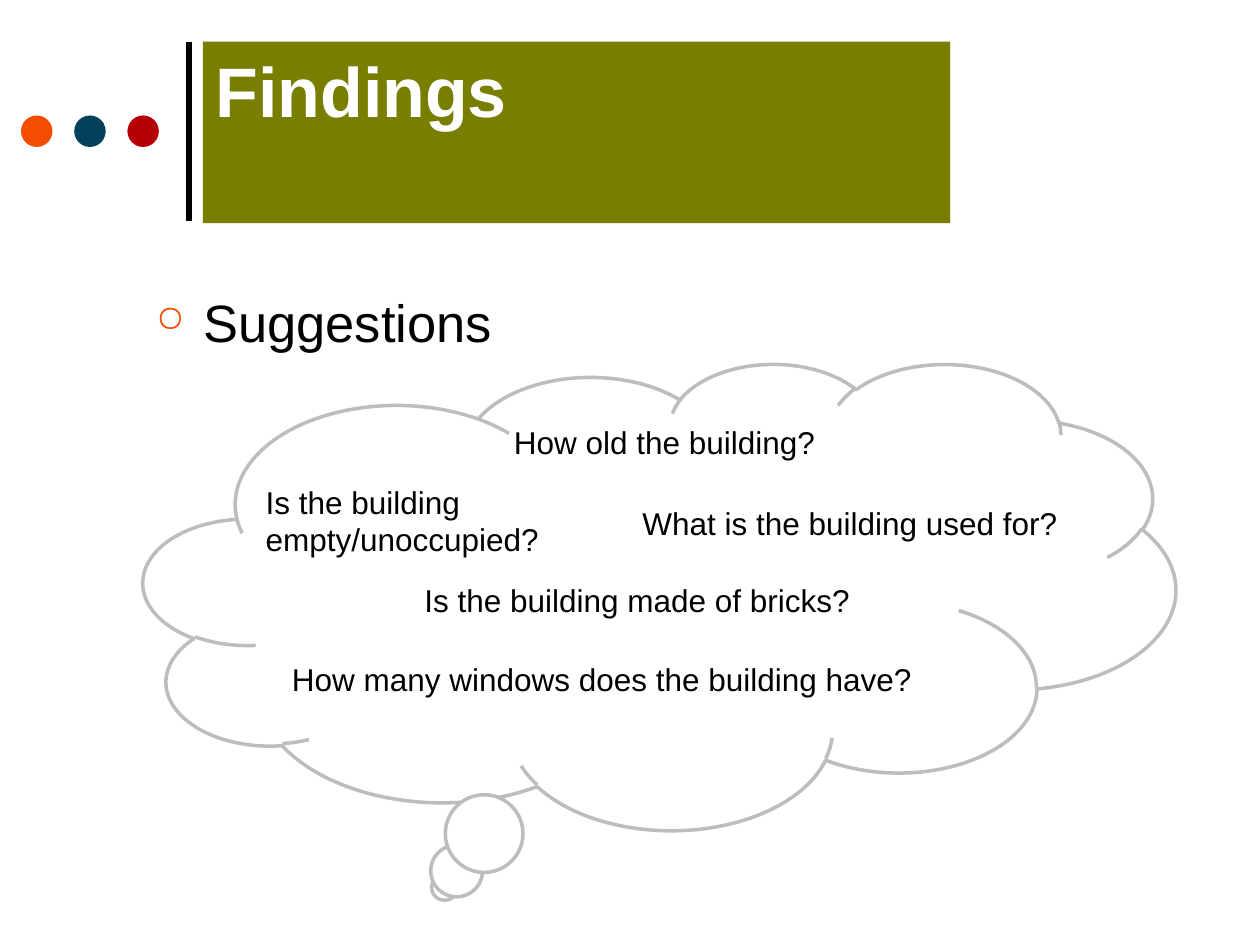
from dataclasses import dataclass

from lxml.etree import SubElement
from pptx import Presentation
from pptx.dml.color import RGBColor
from pptx.enum.shapes import MSO_CONNECTOR, MSO_SHAPE
from pptx.enum.text import MSO_ANCHOR, MSO_AUTO_SIZE, PP_ALIGN
from pptx.oxml.ns import qn
from pptx.shapes.autoshape import Shape
from pptx.slide import Slide
from pptx.text.text import _Paragraph
from pptx.util import Pt


@dataclass(frozen=True)
class Theme:
    font: str = "Arial"
    title_size: float = 40
    body_size: float = 30
    question_size: float = 18
    ink: str = "000000"
    paper: str = "FFFFFF"
    olive: str = "797E01"
    outline: str = "BDBDBD"
    dots: tuple[str, ...] = ("F54C00", "01415B", "B70005")


@dataclass(frozen=True)
class Area:
    left: float
    top: float
    width: float
    height: float

    def lengths(self) -> tuple[Pt, ...]:
        return Pt(self.left), Pt(self.top), Pt(self.width), Pt(self.height)


@dataclass(frozen=True)
class Question:
    text: str
    area: Area


THEME = Theme()
TITLE_AREA = Area(116, 23.75, 427, 103.75)
BODY_AREA = Area(82, 162, 612, 312)
CLOUD_AREA = Area(82, 207.4, 589.7, 266.4)
DOT_SIZE, DOT_STEP = 18, 30.4
BULLET_INDENT = 27

QUESTIONS = (
    Question("How old the building?", Area(286.6, 238.3, 203.8, 28.8)),
    Question("Is the building made of bricks?", Area(235.5, 328.3, 283.7, 28.8)),
    Question("How many windows does the building have?", Area(159.8, 373.7, 393, 28.8)),
    Question("What is the building used for?", Area(360, 284.4, 283.7, 28.8)),
    Question("Is the building empty/unoccupied?", Area(144.7, 272.2, 283.7, 51)),
)


def color(value: str) -> RGBColor:
    return RGBColor.from_string(value)


def style_text(para: _Paragraph, size: float, ink: str, bold: bool = False) -> None:
    para.alignment = PP_ALIGN.LEFT
    para.font.name = THEME.font
    para.font.size = Pt(size)
    para.font.bold = bold
    para.font.color.rgb = color(ink)


def add_title(page: Slide, text: str) -> None:
    title = page.shapes.title
    title.left, title.top, title.width, title.height = TITLE_AREA.lengths()
    title.fill.solid()
    title.fill.fore_color.rgb = color(THEME.olive)
    title.text_frame.text = text
    title.text_frame.vertical_anchor = MSO_ANCHOR.TOP
    style_text(title.text_frame.paragraphs[0], THEME.title_size, THEME.paper, bold=True)


def add_filled(page: Slide, kind: MSO_SHAPE, area: Area, fill: str) -> Shape:
    shape = page.shapes.add_shape(kind, *area.lengths())
    shape.shadow.inherit = False
    shape.fill.solid()
    shape.fill.fore_color.rgb = color(fill)
    shape.line.fill.background()
    return shape


def add_rule(page: Slide) -> None:
    rule = page.shapes.add_connector(
        MSO_CONNECTOR.STRAIGHT, Pt(108), Pt(126), Pt(108), Pt(24))
    rule.line.color.rgb = color(THEME.ink)
    rule.line.width = Pt(3)
    SubElement(rule.element.spPr, qn("a:effectLst"))


def add_text(page: Slide, text: str, area: Area) -> Shape:
    box = page.shapes.add_textbox(*area.lengths())
    box.text_frame.word_wrap = True
    box.text_frame.text = text
    return box


def add_bullet(para: _Paragraph, ink: str) -> None:
    properties = para._p.get_or_add_pPr()
    properties.set("marL", str(Pt(BULLET_INDENT)))
    properties.set("indent", str(-Pt(BULLET_INDENT)))
    bullet_color = SubElement(properties, qn("a:buClr"))
    SubElement(bullet_color, qn("a:srgbClr"), val=ink)
    SubElement(properties, qn("a:buSzPct"), val="70000")
    SubElement(properties, qn("a:buChar"), char="○")


def add_question(page: Slide, question: Question) -> None:
    box = add_text(page, question.text, question.area)
    box.text_frame.auto_size = MSO_AUTO_SIZE.SHAPE_TO_FIT_TEXT
    style_text(box.text_frame.paragraphs[0], THEME.question_size, THEME.ink)


def main() -> None:
    deck = Presentation()
    deck.slide_width, deck.slide_height = Pt(720), Pt(540)
    page = deck.slides.add_slide(deck.slide_layouts[5])

    # Heading with its rule and dots
    add_title(page, "Findings")
    add_rule(page)
    for index, fill in enumerate(THEME.dots):
        dot_area = Area(12 + index * DOT_STEP, 66, DOT_SIZE, DOT_SIZE)
        add_filled(page, MSO_SHAPE.OVAL, dot_area, fill)

    # Bulleted line
    body = add_text(page, "Suggestions", BODY_AREA)
    para = body.text_frame.paragraphs[0]
    add_bullet(para, THEME.dots[0])
    style_text(para, THEME.body_size, THEME.ink)

    # Thought cloud and the questions in it
    cloud = add_filled(page, MSO_SHAPE.CLOUD_CALLOUT, CLOUD_AREA, THEME.paper)
    cloud.line.color.rgb = color(THEME.outline)
    cloud.line.width = Pt(2)
    for question in QUESTIONS:
        add_question(page, question)

    deck.save("out.pptx")


if __name__ == "__main__":
    main()
